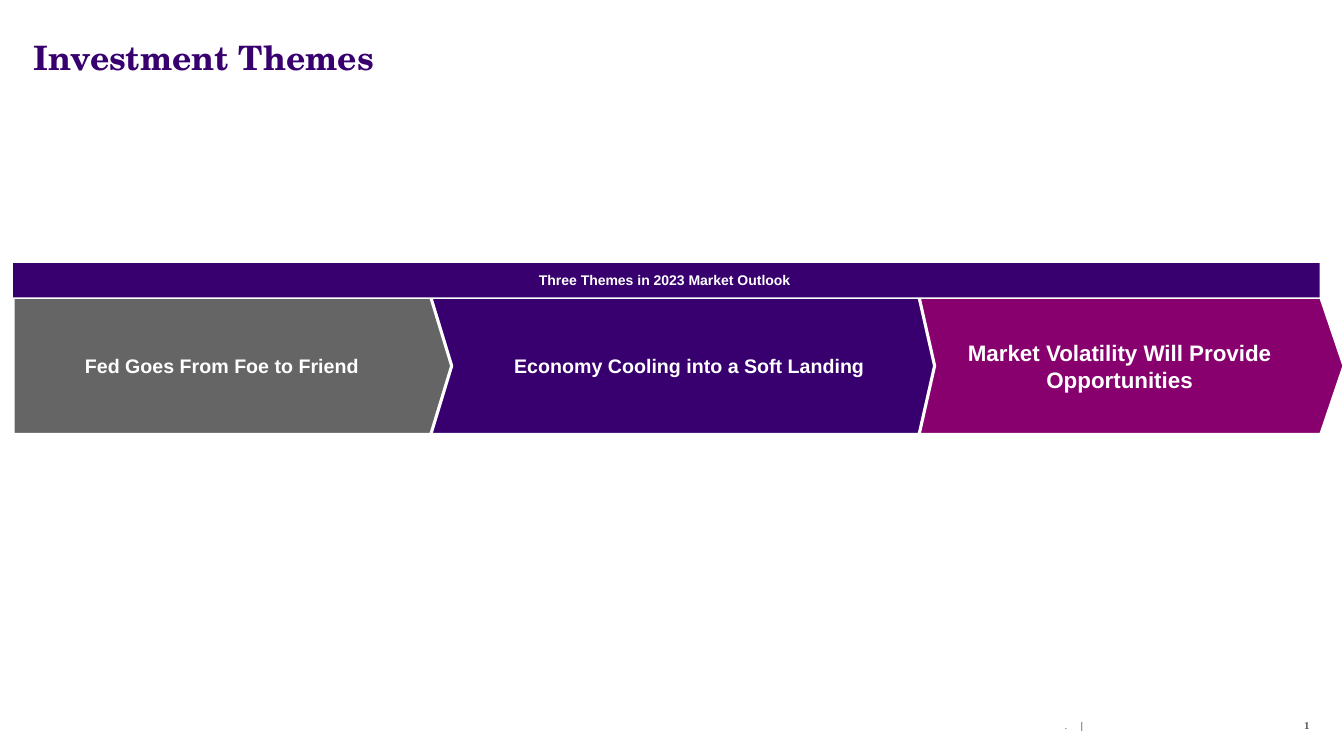
from dataclasses import dataclass

from pptx import Presentation
from pptx.dml.color import RGBColor
from pptx.enum.shapes import MSO_SHAPE
from pptx.enum.text import MSO_ANCHOR, MSO_AUTO_SIZE, PP_ALIGN
from pptx.oxml.ns import qn
from pptx.util import Inches, Pt
from lxml import etree

RECTANGLE, ARROW = MSO_SHAPE.RECTANGLE, MSO_SHAPE.RIGHT_ARROW
MIDDLE, TOP = MSO_ANCHOR.MIDDLE, MSO_ANCHOR.TOP
LEFT, CENTER, RIGHT = PP_ALIGN.LEFT, PP_ALIGN.CENTER, PP_ALIGN.RIGHT
NO_AUTOFIT = MSO_AUTO_SIZE.NONE


@dataclass(frozen=True)
class Theme:
    purple: str = "37006E"
    magenta: str = "87006E"
    gray: str = "656565"
    footer: str = "595959"
    white: str = "FFFFFF"
    serif: str = "TeX Gyre Schola"
    sans: str = "Arial"
    title: int = 24
    large: int = 16
    medium: int = 14
    banner: int = 10
    small: int = 7


THEME = Theme()
THEMES = [
    ("Fed Goes From Foe to Friend", 0.13, 4.35, 0.152, THEME.gray, THEME.medium, 0),
    ("Economy Cooling into a Soft Landing", 4.06, 5.21, 0.113, THEME.purple, THEME.medium, 0.5),
    ("Market Volatility Will Provide Opportunities", 8.61, 4.72, 0.169, THEME.magenta, THEME.large, 0.5),
]


def write(shape, text, size, color, font=THEME.sans, bold=True, align=CENTER,
          anchor=MIDDLE, insets=(0.1, 0.05, 0.1, 0.05)):
    frame = shape.text_frame
    frame.text = text
    frame.word_wrap = True
    frame.auto_size = NO_AUTOFIT
    frame.vertical_anchor = anchor
    (frame.margin_left, frame.margin_top,
     frame.margin_right, frame.margin_bottom) = map(Inches, insets)
    paragraph = frame.paragraphs[0]
    paragraph.alignment = align
    for run in paragraph.runs:
        run.font.name = font
        run.font.size = Pt(size)
        run.font.bold = bold
        run.font.color.rgb = RGBColor.from_string(color)
    return paragraph


def add_block(slide, preset, box, fill):
    block = slide.shapes.add_shape(preset, *map(Inches, box))
    block.shadow.inherit = False
    block.fill.solid()
    block.fill.fore_color.rgb = RGBColor.from_string(fill)
    block.line.fill.background()
    return block


def add_title(slide, left, top, width, height):
    title = slide.shapes.title
    title.left, title.top, title.width, title.height = map(Inches, (left, top, width, height))
    write(title, "Investment Themes", THEME.title, THEME.purple, THEME.serif,
          align=LEFT, insets=(0, 0.05, 0.1, 0.05))


def add_theme_flow(slide, left, top, width, banner_height, arrow_height):
    for text, start, length, head, fill, size, indent in reversed(THEMES):
        box = (left + start - THEMES[0][1], top + banner_height, length, arrow_height)
        arrow = add_block(slide, ARROW, box, fill)
        arrow.adjustments[0] = 1
        arrow.adjustments[1] = head
        arrow.line.color.rgb = RGBColor.from_string(THEME.white)
        arrow.line.width = Pt(2.25)
        paragraph = write(arrow, text, size, THEME.white, insets=(0.2, 0.1, 0.2, 0.1))
        properties = paragraph._p.get_or_add_pPr()
        properties.set("marL", str(Inches(indent)))
        properties.set("indent", "0")
    banner = add_block(slide, RECTANGLE, (left, top, width, banner_height), THEME.purple)
    write(banner, "Three Themes in 2023 Market Outlook ", THEME.banner, THEME.white)


def add_footer(slide, left, top, width, height):
    mark = slide.shapes.add_textbox(*map(Inches, (left, top + 0.05, width, height - 0.09)))
    paragraph = write(mark, ".\t|", THEME.small, THEME.footer, bold=False, align=LEFT, anchor=TOP)
    tabs = etree.SubElement(paragraph._p.get_or_add_pPr(), qn("a:tabLst"))
    etree.SubElement(tabs, qn("a:tab"), pos=str(Inches(0.16)), algn="l")

    number = slide.shapes.add_textbox(*map(Inches, (left + 2.1, top, 0.53, height)))
    paragraph = write(number, "1", THEME.small, THEME.footer, THEME.serif, align=RIGHT)
    field = paragraph.runs[0]._r
    field.tag = qn("a:fld")
    field.set("id", "{B6F15528-21DE-4FAA-801E-634DDDAF4B2B}")
    field.set("type", "slidenum")


def main():
    deck = Presentation()
    deck.slide_width, deck.slide_height = Inches(13.33), Inches(7.5)
    slide = deck.slides.add_slide(deck.slide_layouts[5])
    add_footer(slide, 10.46, 7.04, 2.56, 0.31)
    add_title(slide, 0.33, 0.22, 12.67, 0.7)
    add_theme_flow(slide, 0.13, 2.61, 12.96, 0.34, 1.36)
    deck.save("out.pptx")


if __name__ == "__main__":
    main()
